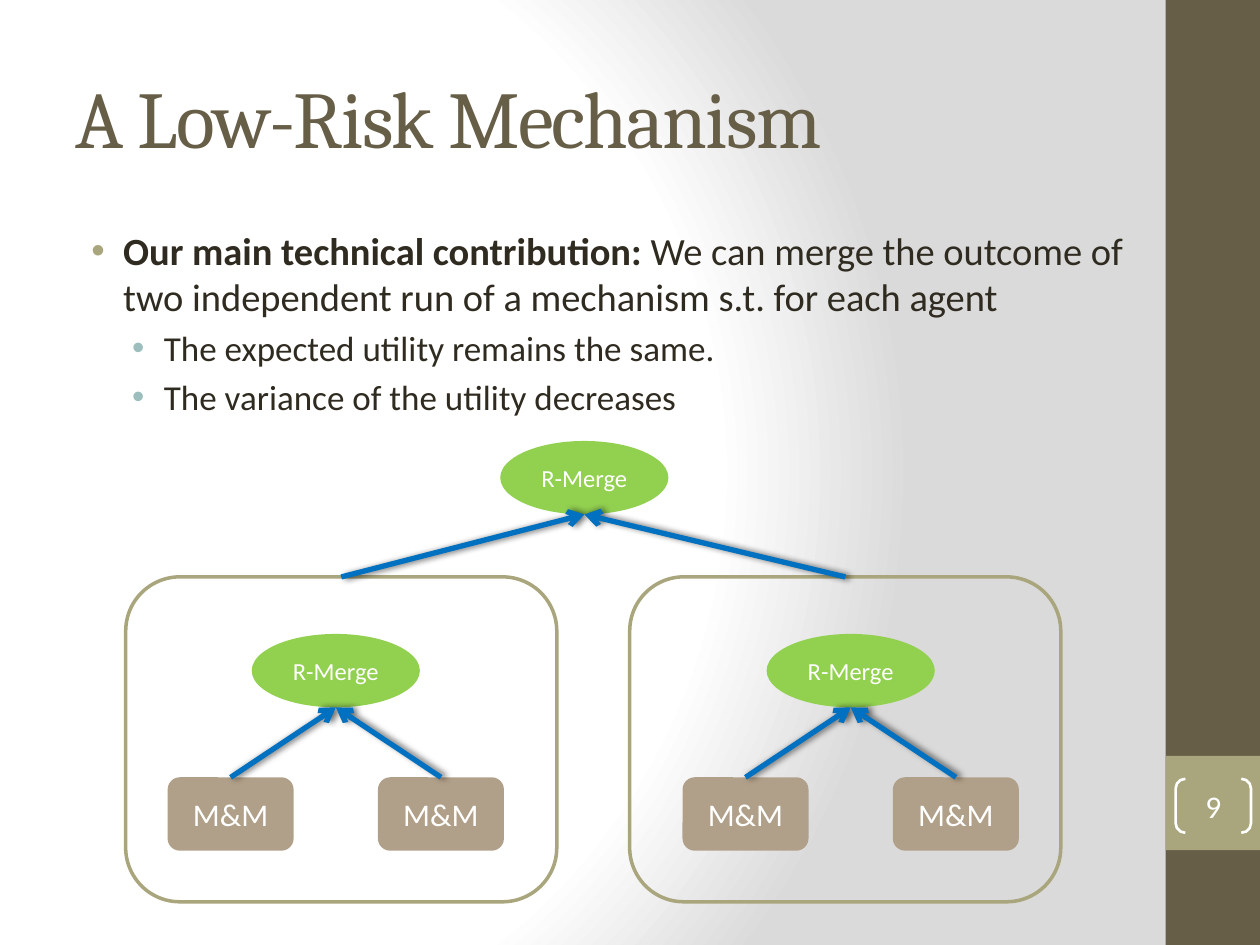
import pptx
import pptx.dml.color
import pptx.enum.shapes
import pptx.enum.text
import pptx.oxml
import pptx.oxml.ns
import pptx.util
from lxml import etree

Cm, Pt = pptx.util.Cm, pptx.util.Pt
SHAPE = pptx.enum.shapes.MSO_SHAPE
ALIGN = pptx.enum.text.PP_ALIGN
MIDDLE = pptx.enum.text.MSO_ANCHOR.MIDDLE
NS = pptx.oxml.ns.nsdecls("a", "p")

DARK, OLIVE, WHITE, INK = "675E47", "A9A57C", "FFFFFF", "2F2B20"
TAN, GREEN, BLUE, TEAL = "B1A089", "92D050", "0070C0", "9CBEBD"


def rgb(hex_colour):
    return pptx.dml.color.RGBColor.from_string(hex_colour)


def add_block(kind, left, top, width, height, fill=None, line=None, line_pt=2, label=None, size=18):
    """Add a preset shape, measured in cm, with an optional centred label."""
    block = slide.shapes.add_shape(kind, Cm(left), Cm(top), Cm(width), Cm(height))
    block.shadow.inherit = False
    if fill:
        block.fill.solid()
        block.fill.fore_color.rgb = rgb(fill)
    else:
        block.fill.background()
    if line:
        block.line.color.rgb = rgb(line)
        block.line.width = Pt(line_pt)
    else:
        block.line.fill.background()
    if label:
        frame = block.text_frame
        frame.vertical_anchor = MIDDLE
        paragraph = frame.paragraphs[0]
        paragraph.alignment = ALIGN.CENTER
        run = paragraph.add_run()
        run.text = label
        for attribute, value in {"name": "Calibri", "size": Pt(size)}.items():
            setattr(run.font, attribute, value)
        run.font.color.rgb = rgb(WHITE)
    return block


deck = pptx.Presentation()
deck.slide_width, deck.slide_height = Cm(25.4), Cm(19.05)
slide = deck.slides.add_slide(deck.slide_layouts[1])

# Background glow
stops = "".join(
    f'<a:gs pos="{position * 1000}"><a:srgbClr val="{colour}"/></a:gs>'
    for position, colour in [(0, WHITE), (75, WHITE), (100, "DADADA")]
)
slide.element.cSld.insert(0, pptx.oxml.parse_xml(
    f'<p:bg {NS}><p:bgPr><a:gradFill rotWithShape="1"><a:gsLst>{stops}</a:gsLst>'
    '<a:path path="circle"><a:fillToRect l="20000" t="50000" r="100000" b="50000"/></a:path>'
    "</a:gradFill><a:effectLst/></p:bgPr></p:bg>"
))

# Side band with the slide number
add_block(SHAPE.RECTANGLE, 23.5, 0, 1.9, 19.05, fill=DARK)
add_block(SHAPE.RECTANGLE, 23.5, 15.24, 1.9, 1.9, fill=OLIVE)
number = add_block(SHAPE.DOUBLE_BRACKET, 23.7, 15.7, 1.52, 1.09, line=WHITE, line_pt=1.5, label="9")
number.adjustments[0] = 0.18
for side in ("left", "top", "right", "bottom"):
    setattr(number.text_frame, f"margin_{side}", 0)

# Title and body
title, body = slide.shapes.title, slide.placeholders[1]
for holder, box in [(title, (1.27, 0.76, 21.16, 3.18)), (body, (1.27, 4.45, 22.23, 4.01))]:
    for attribute, value in zip(("left", "top", "width", "height"), box):
        setattr(holder, attribute, Cm(value))
    holder.text_frame.auto_size = pptx.enum.text.MSO_AUTO_SIZE.NONE

title.text_frame.text = "A Low-Risk Mechanism"
title.text_frame.vertical_anchor = MIDDLE
heading = title.text_frame.paragraphs[0]
heading.alignment = ALIGN.LEFT
heading_run = heading.runs[0]
for attribute, value in {"name": "Cambria", "size": Pt(46)}.items():
    setattr(heading_run.font, attribute, value)
heading_run.font.color.rgb = rgb(DARK)
heading_run.font._element.set("spc", "-100")

points = [
    (0, 22, OLIVE, 0.96, [
        ("Our main technical contribution:", True),
        (" We can merge the outcome of two independent run of a mechanism s.t. for each agent", False),
    ]),
    (1, 20, TEAL, 1.78, [("The expected utility remains the same.", False)]),
    (1, 20, TEAL, 1.78, [("The variance of the utility decreases", False)]),
]
for index, (level, size, bullet_colour, indent, pieces) in enumerate(points):
    point = body.text_frame.paragraphs[0] if index == 0 else body.text_frame.add_paragraph()
    point.level = level
    for text, bold in pieces:
        run = point.add_run()
        run.text = text
        for attribute, value in {"name": "Calibri", "size": Pt(size), "bold": bold}.items():
            setattr(run.font, attribute, value)
        run.font.color.rgb = rgb(INK)
    properties = point._p.get_or_add_pPr()
    properties.set("marL", str(Cm(indent)))
    properties.set("indent", str(-Cm(0.64)))
    bullet = etree.SubElement(properties, pptx.oxml.ns.qn("a:buClr"))
    etree.SubElement(bullet, pptx.oxml.ns.qn("a:srgbClr"), val=bullet_colour)
    etree.SubElement(properties, pptx.oxml.ns.qn("a:buFont"), typeface="Arial")
    etree.SubElement(properties, pptx.oxml.ns.qn("a:buChar"), char="•")

# Merge tree: each panel merges two runs, and the root merges both panels
panel_width, panel_top = 8.69, 11.63
run_width, run_top, run_offset = 2.54, 15.67, 2.12
merge_width, node_height = 3.39, 1.48
root_x, root_top, merge_top = 11.78, 8.89, 12.78

merges = [(root_x, root_top)]
arrows = []
for panel_x, merge_x in [(6.88, 6.77), (17.04, 17.15)]:
    add_block(SHAPE.ROUNDED_RECTANGLE, panel_x - panel_width / 2, panel_top, panel_width, 6.55, line=OLIVE)
    merges.append((merge_x, merge_top))
    arrows.append((panel_x, panel_top, root_x, root_top + node_height))
    for run_x in (merge_x - run_offset, merge_x + run_offset):
        add_block(SHAPE.ROUNDED_RECTANGLE, run_x - run_width / 2, run_top, run_width, node_height,
                  fill=TAN, label="M&M")
        arrows.append((run_x, run_top, merge_x, merge_top + node_height))

for merge_x, top in merges:
    add_block(SHAPE.OVAL, merge_x - merge_width / 2, top, merge_width, node_height,
              fill=GREEN, label="R-Merge", size=14)

for ends in arrows:
    arrow = slide.shapes.add_connector(pptx.enum.shapes.MSO_CONNECTOR.STRAIGHT, *map(Cm, ends))
    arrow.line.color.rgb = rgb(BLUE)
    arrow.line.width = Pt(3)
    etree.SubElement(arrow.line._get_or_add_ln(), pptx.oxml.ns.qn("a:tailEnd"), type="arrow")
    arrow._element.spPr.append(pptx.oxml.parse_xml(
        f'<a:effectLst {NS}><a:outerShdw blurRad="{Pt(4)}" dist="{Pt(2)}" dir="0">'
        '<a:srgbClr val="000000"><a:alpha val="60000"/></a:srgbClr></a:outerShdw></a:effectLst>'
    ))

deck.save("out.pptx")
